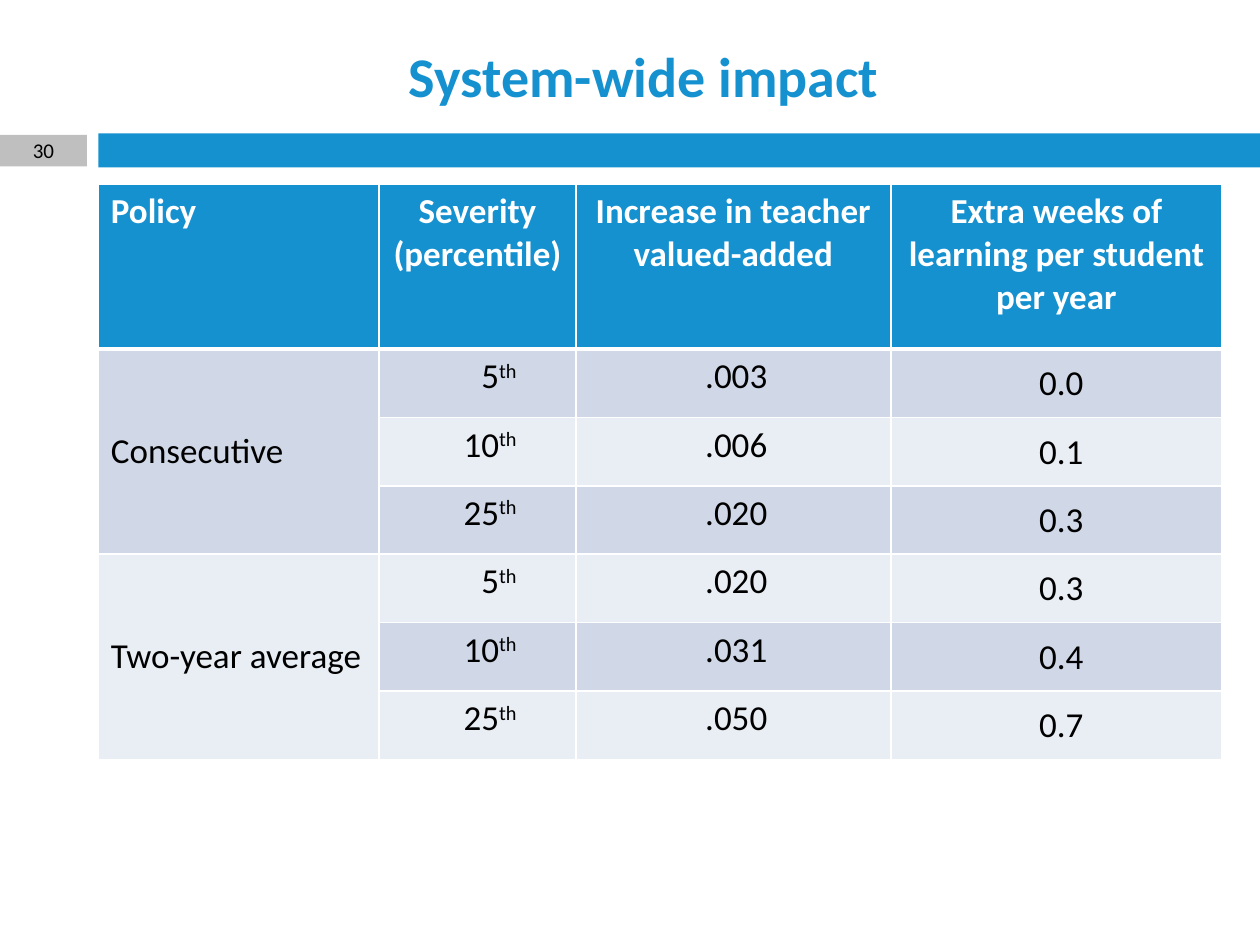
from dataclasses import dataclass

from lxml import etree
from pptx import Presentation
from pptx.dml.color import RGBColor
from pptx.enum.shapes import MSO_SHAPE
from pptx.enum.text import MSO_ANCHOR, PP_ALIGN
from pptx.oxml.ns import qn
from pptx.util import Inches, Pt

LEFT, CENTER, RIGHT = PP_ALIGN.LEFT, PP_ALIGN.CENTER, PP_ALIGN.RIGHT
TOP, MIDDLE = MSO_ANCHOR.TOP, MSO_ANCHOR.MIDDLE
RECTANGLE = MSO_SHAPE.RECTANGLE
TITLE_ONLY = 5
GRID_COLUMNS, GRID_ROWS = 100, 75
DEFAULT_INSETS = (0.1, 0.05, 0.1, 0.05)


@dataclass(frozen=True)
class Theme:
    font: str = "Calibri"
    accent: str = "1691D0"
    marker: str = "BFBFBF"
    light: str = "FFFFFF"
    dark: str = "000000"
    bands: tuple = ("D0D8E8", "E9EDF4")
    title_size: int = 32
    table_size: int = 20
    number_size: int = 12
    rule: int = 1
    header_rule: int = 3


def write(frame, text, *, font, size, color, bold=False, align=LEFT, suffix=""):
    """Fill the frame with one paragraph; suffix follows as superscript."""
    paragraph = frame.paragraphs[0]
    paragraph.alignment = align
    for part, raised in ((text, False), (suffix, True)):
        if not part:
            continue
        run = paragraph.add_run()
        run.text = part
        run.font.name, run.font.size, run.font.bold = font, Pt(size), bold
        run.font.color.rgb = RGBColor.from_string(color)
        if raised:
            run._r.get_or_add_rPr().set("baseline", "30000")


def set_borders(cell, color, **widths):
    properties = cell._tc.get_or_add_tcPr()
    for side in "LRTB":
        line = etree.SubElement(properties, qn(f"a:ln{side}"), w=str(Pt(widths[side])))
        fill = etree.SubElement(line, qn("a:solidFill"))
        etree.SubElement(fill, qn("a:srgbClr"), val=color)


class SlideBuilder:
    """Draws on one slide; all lengths are grid columns and rows."""

    def __init__(self, deck, theme):
        self.theme = theme
        self.slide = deck.slides.add_slide(deck.slide_layouts[TITLE_ONLY])
        self.column = deck.slide_width / GRID_COLUMNS
        self.row = deck.slide_height / GRID_ROWS

    def place(self, left, top, width, height):
        return (round(left * self.column), round(top * self.row),
                round(width * self.column), round(height * self.row))

    def title(self, text, *area):
        title = self.slide.shapes.title
        title.left, title.top, title.width, title.height = self.place(*area)
        title.text_frame.vertical_anchor = MIDDLE
        write(title.text_frame, text, font=self.theme.font, size=self.theme.title_size,
              color=self.theme.accent, bold=True, align=CENTER)

    def bar(self, color, *area, label=""):
        bar = self.slide.shapes.add_shape(RECTANGLE, *self.place(*area))
        bar.shadow.inherit = False
        bar.fill.solid()
        bar.fill.fore_color.rgb = RGBColor.from_string(color)
        bar.line.fill.background()
        if label:
            frame = bar.text_frame
            frame.vertical_anchor = MIDDLE
            frame.margin_top = frame.margin_bottom = 0
            write(frame, label, font=self.theme.font, size=self.theme.number_size,
                  color=self.theme.dark, align=CENTER)

    def table(self, left, top, widths, heights):
        area = self.place(left, top, sum(widths), sum(heights))
        table = self.slide.shapes.add_table(len(heights), len(widths), *area).table
        for column, width in zip(table.columns, widths):
            column.width = round(width * self.column)
        for row, height in zip(table.rows, heights):
            row.height = round(height * self.row)
        return table

    def cell(self, table, row, column, text, *, fill, anchor=TOP,
             insets=DEFAULT_INSETS, **text_format):
        theme = self.theme
        cell = table.cell(row, column)
        set_borders(cell, theme.light, L=theme.rule, R=theme.rule,
                    T=theme.header_rule if row == 1 else theme.rule,
                    B=theme.header_rule if row == 0 else theme.rule)
        cell.fill.solid()
        cell.fill.fore_color.rgb = RGBColor.from_string(fill)
        cell.vertical_anchor = anchor
        (cell.margin_left, cell.margin_top,
         cell.margin_right, cell.margin_bottom) = map(Inches, insets)
        style = {"font": theme.font, "size": theme.table_size, "color": theme.dark}
        write(cell.text_frame, text, **{**style, **text_format})

    def impact_table(self, headings, policies, *, left, top, widths, header_height, row_height):
        theme = self.theme
        body_rows = sum(len(results) for _, results in policies)
        table = self.table(left, top, widths, [header_height] + [row_height] * body_rows)
        for column, heading in enumerate(headings):
            self.cell(table, 0, column, heading, fill=theme.accent, color=theme.light,
                      bold=True, align=CENTER if column else LEFT)
        row = 1
        for policy, results in policies:
            first = row
            for percentile, increase, weeks in results:
                band = theme.bands[(row - 1) % 2]
                self.cell(table, row, 0, policy if row == first else "",
                          fill=band, anchor=MIDDLE)
                self.cell(table, row, 1, percentile, suffix="th", fill=band,
                          align=RIGHT, insets=(0.1, 0.05, 0.47, 0.05))
                self.cell(table, row, 2, increase, fill=band,
                          align=RIGHT, insets=(0.1, 0.05, 0.98, 0.05))
                self.cell(table, row, 3, weeks, fill=band, anchor=MIDDLE,
                          align=RIGHT, insets=(0.01, 0.01, 1.1, 0))
                row += 1
            table.cell(first, 0).merge(table.cell(row - 1, 0))


HEADINGS = ("Policy", "Severity (percentile)", "Increase in teacher valued-added",
            "Extra weeks of learning per student per year")
POLICIES = (
    ("Consecutive", (("5", ".003", "0.0"), ("10", ".006", "0.1"), ("25", ".020", "0.3"))),
    ("Two-year average", (("5", ".020", "0.3"), ("10", ".031", "0.4"), ("25", ".050", "0.7"))),
)


def main():
    deck = Presentation()
    deck.slide_width, deck.slide_height = Inches(10), Inches(7.5)
    theme = Theme()
    builder = SlideBuilder(deck, theme)
    margin = 7.8
    builder.bar(theme.accent, margin, 10.6, GRID_COLUMNS - margin, 2.7)
    builder.bar(theme.marker, 0, 10.7, 6.9, 2.5, label="30")
    builder.title("System-wide impact", margin, 2.6, 86.6, 6.8)
    builder.impact_table(HEADINGS, POLICIES, left=margin, top=14.6,
                         widths=(22.3, 15.6, 25, 26.3), header_height=13.1, row_height=5.43)
    deck.save("out.pptx")


if __name__ == "__main__":
    main()
